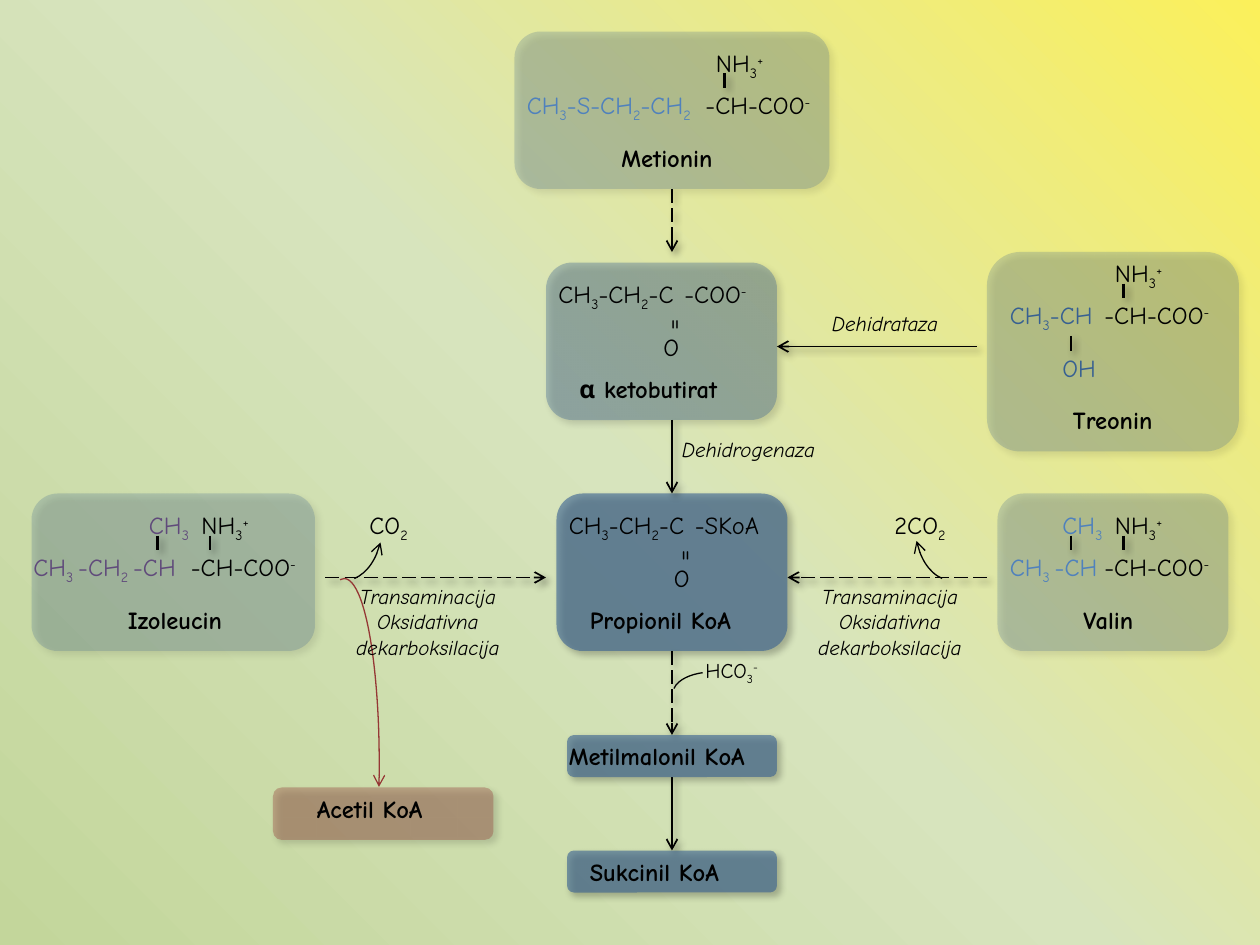
from dataclasses import dataclass

from lxml import etree
from pptx import Presentation
from pptx import util as u
from pptx.dml.color import RGBColor
from pptx.enum import dml, shapes, text
from pptx.oxml import parse_xml
from pptx.oxml.ns import nsdecls, qn

COLORS = {"black": "000000", "navy": "376092", "blue": "4F81BD", "purple": "604A7B",
          "red": "953735"}
BACKGROUND = [(0, "C3D69B"), (50, "D7E4BD"), (100, "FBF05B")]
FONT = "Comic Neue"
CELL = 1 / 12
BOND = 1.4
BASELINES = {"_": -25000, "^": 30000}


@dataclass
class Label:
    col: float
    row: float
    width: float
    markup: str
    color: str = "black"
    style: str = ""
    size: int = 14
    height: float = 0
    rotation: int = 0


def amino(col, row):
    return [Label(col, row, 0.65, "NH|_3|^+"), Label(col - 1, row + 4, 1.12, "-CH-COO|^-")]


def keto(col, row, end, width):
    return [Label(col + 12, row + 1, width, end),
            Label(col, row + 1, 1.18, "CH|_3|-CH|_2|-C"),
            Label(col + 10, row + 6, 0.36, "O"),
            Label(col + 10.2, row + 3.8, 0.3, "=", rotation=270)]


GROUPS = [
    {"box": (94, 24, 24, 19, "navy", 22), "bonds": [(107, 27), (102, 32)],
     "labels": amino(105, 24) + [
         Label(95, 28, 0.9, "CH|_3|-CH", "navy"),
         Label(100, 33, 0.51, "OH", "navy"),
         Label(98, 38, 1.33, "Treonin", style="bcw")]},
    {"box": (49, 3, 30, 15, "navy", 22), "bonds": [(69, 7)],
     "labels": amino(67, 4) + [
         Label(58, 13, 0.99, "Metionin", style="b"),
         Label(49, 8, 1.67, "CH|_3|-S-CH|_2|-CH|_2", "blue", "w", height=0.49)]},
    {"box": (52, 25, 22, 15, "navy", 34), "bonds": [],
     "labels": keto(52, 25, "-COO|^-", 0.77)},
    {"box": (53, 47, 22, 15, "navy", 60), "bonds": [],
     "labels": keto(53, 47, "-SKoA", 0.79)},
    {"box": (3, 47, 27, 15, "navy", 22), "bonds": [(20, 51), (15, 51)],
     "labels": amino(18, 48) + [
         Label(11, 57, 1.04, "Izoleucin", style="b"),
         Label(2, 52, 1.5, "CH|_3 |-CH|_2 |-CH", "purple", "w", height=0.49),
         Label(13, 48, 0.55, "CH|_3", "purple")]},
    {"box": (95, 47, 22, 15, "navy", 22), "bonds": [(107, 51), (102, 51)],
     "labels": amino(105, 48) + [
         Label(102, 57, 0.66, "Valin", style="b"),
         Label(95, 52, 1.08, "CH|_3 |-CH", "blue", "w", height=0.49),
         Label(100, 48, 0.55, "CH|_3", "blue")]},
]
ARROWS = [
    (64, 18, 64, 24, True), (64, 40, 64, 47, False), (93, 33, 74, 33, False),
    (31, 55, 52, 55, True), (94, 55, 75, 55, True), (64, 62, 64, 70, True),
    (64, 74, 64, 81, False),
]
ARCS = [
    (87.1, 44, 7.3, 11.3, (59.776, 90.314), "tailEnd", "black"),
    (29.2, 44, 7.3, 11.3, (17.861, 47.797), "headEnd", "black"),
    (28.8, 55.1, 7.3, 38.9, (161.283, 3.081), "tailEnd", "red"),
    (64.1, 64, 7.9, 4.1, (111.563, 143.576), None, "black"),
]
BOXES = [(26, 75, 21, 5, "red", 34), (54, 70, 20, 4, "navy", 60), (54, 81, 20, 4, "navy", 60)]
STEPS = "Transaminacija\nOksidativna dekarboksilacija"
LABELS = [
    Label(84, 48, 0.68, "2CO|_2"),
    Label(34, 48, 0.56, "CO|_2"),
    Label(66, 62, 0.68, "HCO|_3|^-", size=12),
    Label(54, 35, 1.47, "α ketobutirat", style="b"),
    Label(55, 57, 1.43, "Propionil KoA", style="b"),
    Label(53, 70, 1.77, "Metilmalonil KoA", style="b"),
    Label(55, 81, 1.37, "Sukcinil KoA", style="b"),
    Label(29, 75, 1.21, "Acetil KoA", style="b"),
    Label(76, 29, 1.38, "Dehidrataza", style="icw", size=12),
    Label(63, 41, 1.38, "Dehidrogenaza", style="icw", size=12),
    Label(29, 55, 1.96, STEPS, style="icw", size=12, height=0.71),
    Label(73, 55, 1.96, STEPS, style="icw", size=12, height=0.71),
]


def grid(*cells):
    return [u.Inches(c * CELL) for c in cells]


def rgb(name):
    return RGBColor.from_string(COLORS[name])


def add_shadow(sp):
    sp._element.spPr.append(parse_xml(
        f'<a:effectLst {nsdecls("a")}><a:outerShdw blurRad="50800" dist="38100" dir="2700000" '
        'algn="tl" rotWithShape="0"><a:srgbClr val="000000"><a:alpha val="40000"/></a:srgbClr>'
        '</a:outerShdw></a:effectLst>'))


def add_head(sp, end):
    etree.SubElement(sp.line._get_or_add_ln(), qn(f"a:{end}"), type="arrow")


def add_box(parent, col, row, cols, rows, color, alpha):
    sp = parent.add_shape(shapes.MSO_SHAPE.ROUNDED_RECTANGLE, *grid(col, row, cols, rows))
    sp.fill.solid()
    sp.fill.fore_color.rgb = rgb(color)
    clr = sp._element.spPr.find(qn("a:solidFill"))[0]
    etree.SubElement(clr, qn("a:alpha"), val=str(alpha * 1000))
    sp.line.fill.background()
    add_shadow(sp)


def add_line(parent, x1, y1, x2, y2, width, dashed=False, arrow=False):
    sp = parent.add_connector(shapes.MSO_CONNECTOR.STRAIGHT, *grid(x1, y1, x2, y2))
    sp.line.color.rgb = rgb("black")
    sp.line.width = u.Pt(width)
    if dashed:
        sp.line.dash_style = dml.MSO_LINE.LONG_DASH
    if arrow:
        add_head(sp, "tailEnd")
    add_shadow(sp)


def add_arc(parent, col, row, cols, rows, angles, end, color):
    sp = parent.add_shape(shapes.MSO_SHAPE.ARC, *grid(col, row, cols, rows))
    sp.adjustments[0], sp.adjustments[1] = angles
    sp.rotation = 1
    sp.shadow.inherit = False
    sp.fill.background()
    sp.line.color.rgb = rgb(color)
    sp.line.width = u.Pt(0.75)
    if end:
        add_head(sp, end)


def add_label(parent, label):
    height = label.height or label.size * 0.0243
    sp = parent.add_textbox(*grid(label.col, label.row), u.Inches(label.width), u.Inches(height))
    sp.rotation = label.rotation
    tf = sp.text_frame
    tf.word_wrap = "w" in label.style
    tf.auto_size = text.MSO_AUTO_SIZE.SHAPE_TO_FIT_TEXT
    for i, line in enumerate(label.markup.split("\n")):
        p = tf.add_paragraph() if i else tf.paragraphs[0]
        if "c" in label.style:
            p.alignment = text.PP_ALIGN.CENTER
        for part in line.split("|"):
            r = p.add_run()
            r.text = part.lstrip("_^")
            r.font.name = FONT
            r.font.size = u.Pt(label.size)
            r.font.color.rgb = rgb(label.color)
            r.font.bold = "b" in label.style
            r.font.italic = "i" in label.style
            if part[0] in BASELINES:
                r._r.get_or_add_rPr().set("baseline", str(BASELINES[part[0]]))


def set_background(s):
    fill = s.background.fill
    fill.solid()
    stops = "".join(f'<a:gs pos="{pos * 1000}"><a:srgbClr val="{c}"/></a:gs>'
                    for pos, c in BACKGROUND)
    solid = s._element.find(".//" + qn("p:bgPr"))[0]
    solid.getparent().replace(solid, parse_xml(
        f'<a:gradFill {nsdecls("a")} rotWithShape="1"><a:gsLst>{stops}</a:gsLst>'
        '<a:lin ang="18900000" scaled="0"/></a:gradFill>'))


def main():
    prs = Presentation()
    prs.slide_width, prs.slide_height = u.Inches(10), u.Inches(7.5)
    s = prs.slides.add_slide(prs.slide_layouts[6])
    set_background(s)
    for group in GROUPS:
        parent = s.shapes.add_group_shape().shapes
        add_box(parent, *group["box"])
        for x, y in group["bonds"]:
            add_line(parent, x, y, x, y + BOND, 1.25)
        for label in group["labels"]:
            add_label(parent, label)
    for x1, y1, x2, y2, dashed in ARROWS:
        add_line(s.shapes, x1, y1, x2, y2, 1, dashed, arrow=True)
    for arc in ARCS:
        add_arc(s.shapes, *arc)
    for box in BOXES:
        add_box(s.shapes, *box)
    for label in LABELS:
        add_label(s.shapes, label)
    prs.save("out.pptx")


if __name__ == "__main__":
    main()
